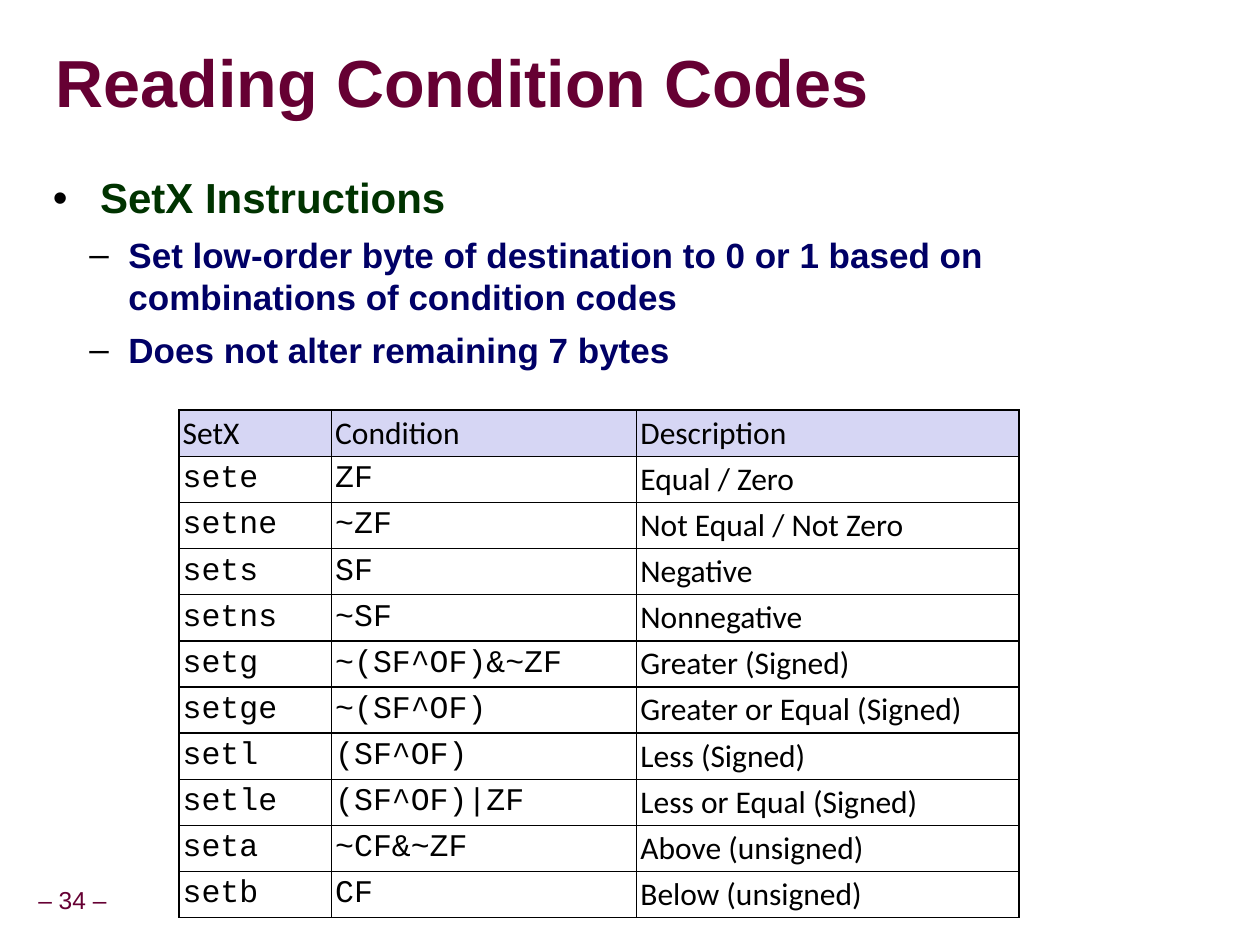
from lxml import etree
from pptx import Presentation
from pptx import util as u
from pptx.dml.color import RGBColor
from pptx.enum import text
from pptx.oxml.ns import qn

Pt = u.Pt
COLOURS = {
    "title": "660033",
    "heading": "003300",
    "detail": "000066",
    "ink": "000000",
    "header": "D6D6F4",
}
CONDITIONS = [
    ("SetX", "Condition", "Description"),
    ("sete", "ZF", "Equal / Zero"),
    ("setne", "~ZF", "Not Equal / Not Zero"),
    ("sets", "SF", "Negative"),
    ("setns", "~SF", "Nonnegative"),
    ("setg", "~(SF^OF)&~ZF", "Greater (Signed)"),
    ("setge", "~(SF^OF)", "Greater or Equal (Signed)"),
    ("setl", "(SF^OF)", "Less (Signed)"),
    ("setle", "(SF^OF)|ZF", "Less or Equal (Signed)"),
    ("seta", "~CF&~ZF", "Above (unsigned)"),
    ("setb", "CF", "Below (unsigned)"),
]
# text, level, size, colour, bullet, left indent, hanging, space before, line spacing
POINTS = [
    ("SetX Instructions", 0, 24, "heading", "•", 27, 27, 15, 0.95),
    ("Set low-order byte of destination to 0 or 1 based on "
     "combinations of condition codes", 1, 20, "detail", "–", 43.2, 22.3, 6.2, 1.0),
    ("Does not alter remaining 7 bytes", 1, 20, "detail", "–", 43.2, 22.3, 6.2, 1.0),
]


def add_solid_colour(parent, colour):
    fill = etree.SubElement(parent, qn("a:solidFill"))
    etree.SubElement(fill, qn("a:srgbClr"), val=COLOURS[colour])


class SlideWriter:
    """Keeps the text style and the page being filled."""

    def __init__(self, page, font="Arial"):
        self.page = page
        self.font = font

    def format(self, para, size, colour, bold=False, font=None):
        for span in para.runs:
            span.font.name = font or self.font
            span.font.size = Pt(size)
            span.font.bold = bold
            span.font.color.rgb = RGBColor.from_string(COLOURS[colour])

    def place(self, box, left, top, width, height):
        box.left, box.top = Pt(left), Pt(top)
        box.width, box.height = Pt(width), Pt(height)

    def frame(self, box, side, edge, anchor, wrap=True):
        frame = box.text_frame
        frame.auto_size = text.MSO_AUTO_SIZE.NONE
        frame.word_wrap = wrap
        frame.vertical_anchor = anchor
        frame.margin_left = frame.margin_right = Pt(side)
        frame.margin_top = frame.margin_bottom = Pt(edge)
        return frame

    def title(self, words):
        box = self.page.shapes.title
        self.place(box, 31.7, 19.4, 686.5, 60.5)
        frame = self.frame(box, 0, 0, text.MSO_ANCHOR.MIDDLE)
        frame.text = words
        para = frame.paragraphs[0]
        para.alignment = text.PP_ALIGN.LEFT
        para.line_spacing = 0.87
        properties = para._p.get_or_add_pPr()
        properties.set("marL", str(Pt(9.4)))
        properties.set("indent", str(-Pt(9.4)))
        self.format(para, 38, "title", bold=True)

    def bullets(self, points):
        box = self.page.placeholders[1]
        self.place(box, 23, 96.5, 653, 410.4)
        frame = self.frame(box, 7.2, 3.6, text.MSO_ANCHOR.TOP)
        frame.text = "\n".join(point[0] for point in points)
        for para, point in zip(frame.paragraphs, points):
            _, level, size, colour, mark, indent, hanging, before, spacing = point
            para.level = level
            para.space_before = Pt(before)
            para.line_spacing = spacing
            self.format(para, size, colour, bold=True)
            properties = para._p.get_or_add_pPr()
            properties.set("marL", str(Pt(indent)))
            properties.set("indent", str(-Pt(hanging)))
            tint = etree.SubElement(properties, qn("a:buClr"))
            etree.SubElement(tint, qn("a:srgbClr"), val=COLOURS["ink"])
            etree.SubElement(properties, qn("a:buFont"), typeface=self.font)
            etree.SubElement(properties, qn("a:buChar"), char=mark)

    def page_number(self, words):
        box = self.page.shapes.add_textbox(Pt(-6.5), Pt(504), Pt(95.8), Pt(22.3))
        frame = self.frame(box, 3.6, 3.6, text.MSO_ANCHOR.MIDDLE, wrap=False)
        frame.text = words
        para = frame.paragraphs[0]
        para.alignment = text.PP_ALIGN.CENTER
        para.line_spacing = 0.9
        self.format(para, 14, "title")

    def border(self, cell):
        properties = cell._tc.get_or_add_tcPr()
        for position, side in enumerate(("lnL", "lnR", "lnT", "lnB")):
            line = etree.Element(qn(f"a:{side}"), w=str(Pt(1)))
            add_solid_colour(line, "ink")
            properties.insert(position, line)

    def table(self, rows, left, top, widths, row_height):
        table = self.page.shapes.add_table(
            len(rows), len(widths), Pt(left), Pt(top),
            Pt(sum(widths)), Pt(row_height * len(rows))).table
        table.horz_banding = False
        for column, width in zip(table.columns, widths):
            column.width = Pt(width)
        for row_index, row in enumerate(rows):
            table.rows[row_index].height = Pt(row_height)
            for column_index, words in enumerate(row):
                cell = table.cell(row_index, column_index)
                is_header = row_index == 0
                is_code = not is_header and column_index < 2
                cell.text_frame.text = words
                cell.vertical_anchor = text.MSO_ANCHOR.MIDDLE
                cell.margin_left = cell.margin_right = Pt(2.2)
                cell.margin_top = cell.margin_bottom = Pt(2.2)
                if is_header:
                    cell.fill.solid()
                    cell.fill.fore_color.rgb = RGBColor.from_string(COLOURS["header"])
                else:
                    cell.fill.background()
                self.format(cell.text_frame.paragraphs[0], 18, "ink",
                            font="Courier New" if is_code else "Calibri")
                self.border(cell)


def main():
    deck = Presentation()
    deck.slide_width, deck.slide_height = Pt(720), Pt(540)
    writer = SlideWriter(deck.slides.add_slide(deck.slide_layouts[1]))
    writer.page_number("– 34 –")
    writer.title("Reading Condition Codes")
    writer.bullets(POINTS)
    writer.table(CONDITIONS, 102.2, 234.4, (87.2, 174.4, 218.4), 26)
    deck.save("out.pptx")


if __name__ == "__main__":
    main()
